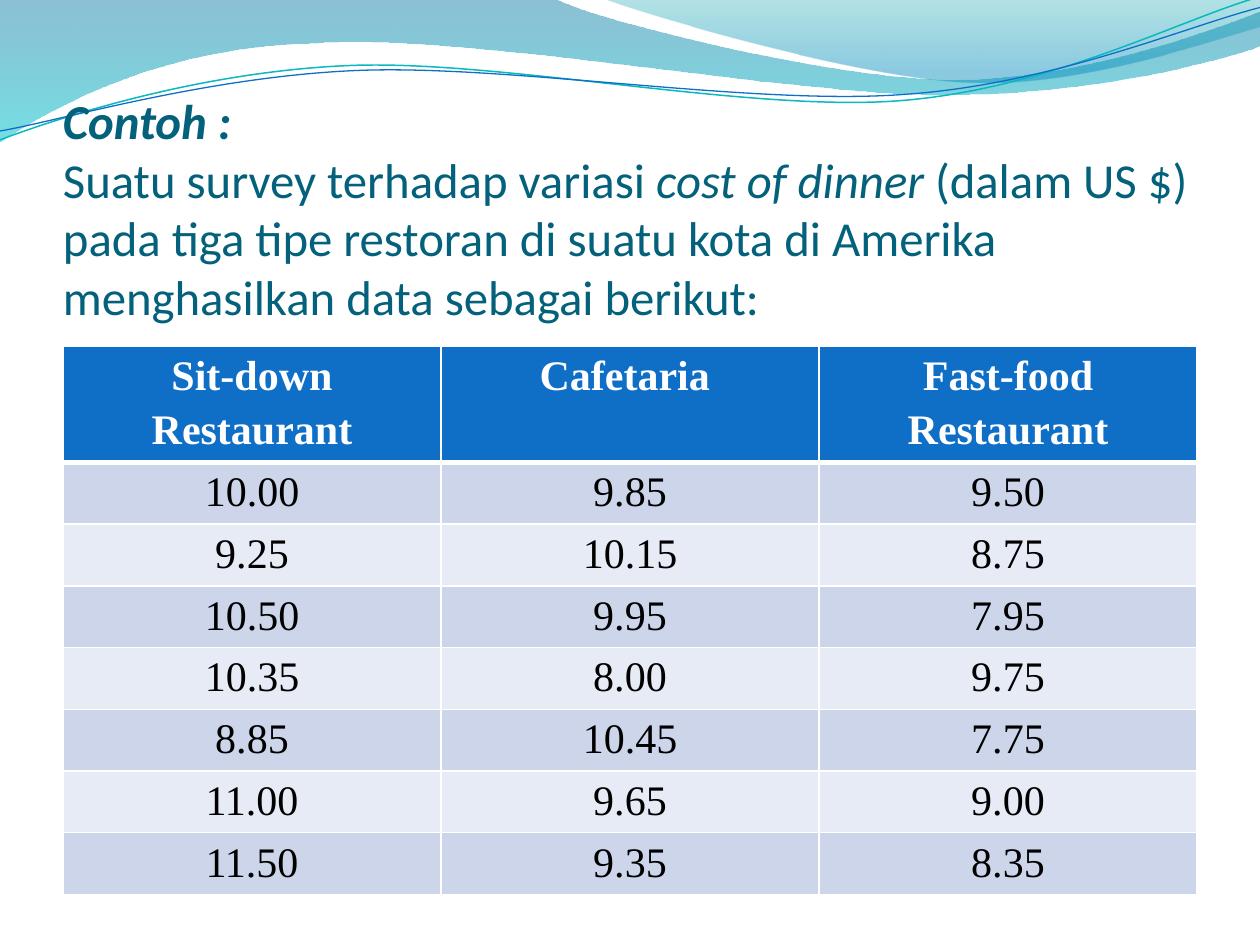
from math import cos, radians, sin

from lxml.etree import SubElement
from pptx import Presentation
from pptx.dml.color import RGBColor
from pptx.enum.text import MSO_ANCHOR, PP_ALIGN
from pptx.oxml import parse_xml
from pptx.oxml.ns import nsdecls, qn
from pptx.util import Inches, Pt

WHITE, BLACK, TITLE = "FFFFFF", "000000", "04617B"
HEADER, BANDS = "0F6FC6", ("CCD5EA", "E7EBF5")
STRAND_TILT = 2.7

WAVES = [
    ([(0, 0), (4.4, -0.01), (4.76, 0.17, 6.64, 0.63, 7.58, 0.63),
      (8.53, 0.63, 9.58, 0.26, 10, 0.09), (10.01, 0.36),
      (9.83, 0.44, 8.7, 0.76, 7.46, 0.75), (6.22, 0.75, 3.82, 0.28, 2.57, 0.34),
      (1.29, 0.36, 0.46, 0.83, -0.01, 1.13), (0, 0)],
     [(0, "0074A1", 45), (1, "00C6CF", 55)]),
    ([(4.79, -0.01), (5.09, 0.11, 6.82, 0.62, 7.69, 0.65),
      (8.56, 0.69, 9.61, 0.32, 10, 0.21), (10, 0), (4.79, -0.01)],
     [(0, "00A1A9", 30), (0.8, "008BBF", 45)]),
]
STRANDS = [
    ([(0, 1.11), (0.48, 0.93, 1.58, 0.57, 2.77, 0.52),
      (3.95, 0.47, 5.93, 0.89, 7.13, 0.8), (8.33, 0.71, 9.38, 0.15, 9.98, -0.02)],
     (4.99, 0.57), "0AB8BF", 0.85),
    ([(0, 1.04), (0.47, 0.96, 1.64, 0.61, 2.83, 0.56),
      (4.03, 0.51, 5.97, 0.84, 7.17, 0.75), (8.36, 0.67, 9.41, 0.21, 10, 0.06)],
     (5, 0.59), "0F6FC6", 0.75),
]
TITLE_RUNS = [
    ("Suatu survey terhadap variasi ", False),
    ("cost of dinner ", True),
    ("(dalam US $) pada tiga tipe restoran di suatu kota di Amerika "
     "menghasilkan data sebagai berikut:", False),
]
DINNER_COSTS = [
    ("Sit-down Restaurant", "Cafetaria ", "Fast-food Restaurant"),
    ("10.00", "9.85", "9.50"),
    ("9.25", "10.15", "8.75"),
    ("10.50", "9.95", "7.95"),
    ("10.35", "8.00", "9.75"),
    ("8.85", "10.45", "7.75"),
    ("11.00", "9.65", "9.00"),
    ("11.50", "9.35", "8.35"),
]


def rgb(value):
    return RGBColor.from_string(value)


def write(paragraph, text, font="Calibri", size=27.9, color=TITLE, bold=False, italic=False):
    run = paragraph.add_run()
    run.text = text
    run.font.name, run.font.size = font, Pt(size)
    run.font.bold, run.font.italic = bold, italic
    run.font.color.rgb = rgb(color)


def turn(point, center, degrees):
    angle, x, y = radians(degrees), point[0] - center[0], point[1] - center[1]
    return (center[0] + x * cos(angle) - y * sin(angle),
            center[1] + x * sin(angle) + y * cos(angle))


class SlideBuilder:
    """Holds the table style and the current slide, and adds each kind of element."""

    def __init__(self, slide, font="Times New Roman", size=24):
        self.slide, self.font, self.size = slide, font, size

    def outline(self, segments, close, center=(0, 0), tilt=0):
        points = [turn(segment[i:i + 2], center, tilt)
                  for segment in segments for i in range(0, len(segment), 2)]
        start, *others = [(Inches(x), Inches(y)) for x, y in points]
        builder = self.slide.shapes.build_freeform(*start)
        builder.add_line_segments(others, close=close)
        shape = builder.convert_to_shape()
        shape.shadow.inherit = False
        shape.rotation = -tilt % 360
        lines = iter(list(shape._element.spPr.iter(qn("a:lnTo"))))
        for segment in segments[1:]:
            group = [next(lines) for _ in range(len(segment) // 2)]
            if len(group) == 3:
                curve = parse_xml(f'<a:cubicBezTo {nsdecls("a")}/>')
                group[0].addprevious(curve)
                for line in group:
                    curve.append(line[0])
                    line.getparent().remove(line)
        return shape

    def wave(self, segments, stops):
        shape = self.outline(segments, True)
        shape.line.fill.background()
        shape.fill.gradient()
        shape.fill.gradient_angle = 270
        for stop, (position, color, opacity) in zip(shape.fill.gradient_stops, stops):
            stop.position, stop.color.rgb = position, rgb(color)
        for element, stop in zip(shape._element.spPr.iter(qn("a:srgbClr")), stops):
            SubElement(element, qn("a:alpha")).set("val", str(stop[2] * 1000))

    def strand(self, segments, center, color, width):
        shape = self.outline(segments, False, center, STRAND_TILT)
        shape.fill.background()
        shape.line.color.rgb, shape.line.width = rgb(color), Pt(width)

    def title(self, heading, runs, left, top, width, height):
        box = self.slide.shapes.add_textbox(Inches(left), Inches(top), Inches(width), Inches(height))
        frame = box.text_frame
        frame.word_wrap, frame.vertical_anchor = True, MSO_ANCHOR.BOTTOM
        frame.margin_left = frame.margin_right = frame.margin_bottom = 0
        paragraph = frame.paragraphs[0]
        write(paragraph, heading, bold=True, italic=True)
        paragraph.add_line_break()
        for text, italic in runs:
            write(paragraph, text, italic=italic)

    def cell(self, cell, text, row):
        is_header = row == 0
        cell.fill.solid()
        cell.fill.fore_color.rgb = rgb(HEADER if is_header else BANDS[(row - 1) % 2])
        cell.margin_left = cell.margin_right = Inches(0.07)
        cell.margin_top = cell.margin_bottom = 0
        paragraph = cell.text_frame.paragraphs[0]
        paragraph.alignment, paragraph.line_spacing = PP_ALIGN.CENTER, 1.15
        write(paragraph, text, font=self.font, size=self.size,
              color=WHITE if is_header else BLACK, bold=is_header)
        widths = {"L": 1, "R": 1, "T": 3 if row == 1 else 1, "B": 3 if is_header else 1}
        for index, (side, width) in enumerate(widths.items()):
            cell._tc.get_or_add_tcPr().insert(index, parse_xml(
                f'<a:ln{side} {nsdecls("a")} w="{Pt(width)}"><a:solidFill>'
                f'<a:srgbClr val="{WHITE}"/></a:solidFill></a:ln{side}>'))

    def table(self, rows, left, top, width, height, row_height):
        frame = self.slide.shapes.add_table(len(rows), len(rows[0]), Inches(left), Inches(top),
                                            Inches(width), Inches(height))
        for row, values in enumerate(rows):
            frame.table.rows[row].height = Inches(row_height)
            for column, text in enumerate(values):
                self.cell(frame.table.cell(row, column), text, row)
        frame.height = Inches(height)


def main():
    presentation = Presentation()
    presentation.slide_width, presentation.slide_height = Inches(10), Inches(7.5)
    builder = SlideBuilder(presentation.slides.add_slide(presentation.slide_layouts[6]))
    for wave in WAVES:
        builder.wave(*wave)
    for strand in STRANDS:
        builder.strand(*strand)
    builder.title("Contoh :", TITLE_RUNS, 0.5, 0.66, 9, 1.92)
    builder.table(DINNER_COSTS, 0.5, 2.75, 9, 4.34, 0.49)
    presentation.save("out.pptx")


if __name__ == "__main__":
    main()
